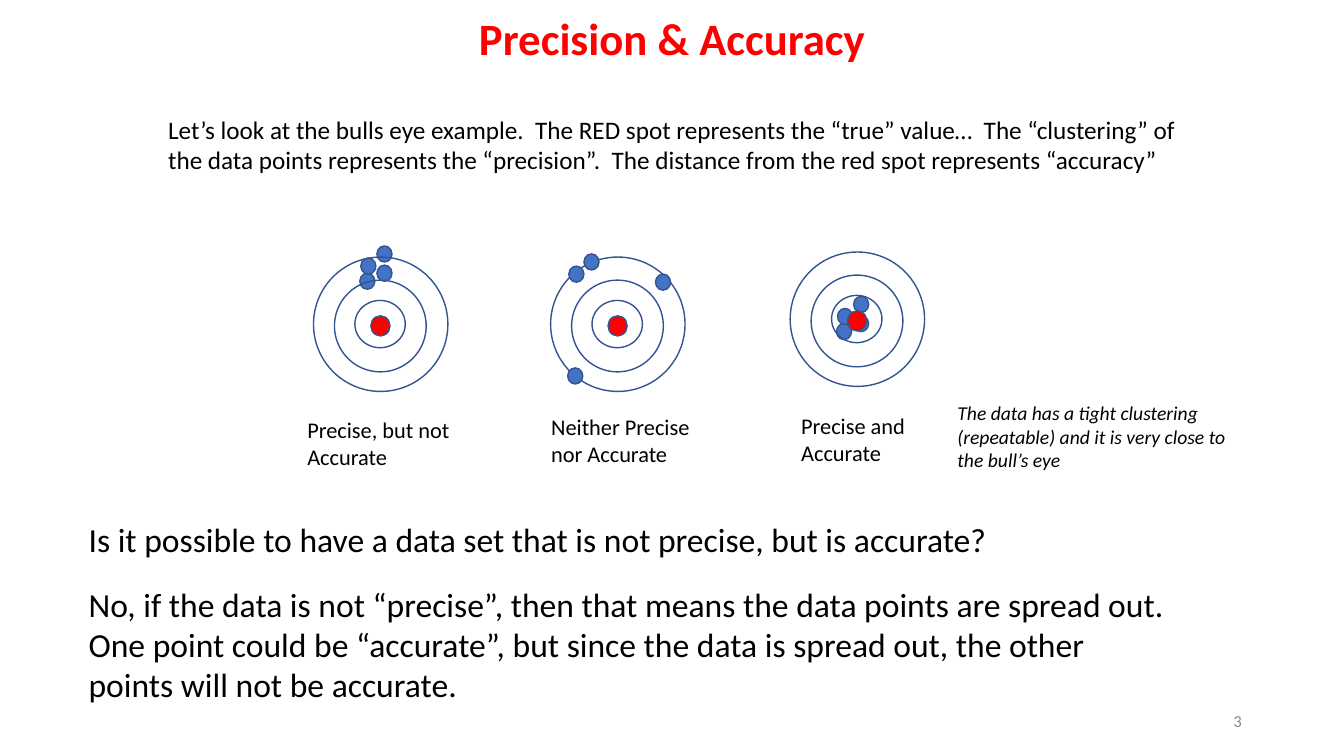
from dataclasses import dataclass, field
from typing import Any, NamedTuple

from pptx import Presentation
from pptx.dml.color import RGBColor
from pptx.enum.shapes import MSO_SHAPE
from pptx.enum.text import MSO_ANCHOR, MSO_AUTO_SIZE, PP_ALIGN
from pptx.util import Pt

OVAL = MSO_SHAPE.OVAL
LEFT, CENTER, RIGHT = PP_ALIGN.LEFT, PP_ALIGN.CENTER, PP_ALIGN.RIGHT
TOP, MIDDLE = MSO_ANCHOR.TOP, MSO_ANCHOR.MIDDLE
GROW, FIXED = MSO_AUTO_SIZE.SHAPE_TO_FIT_TEXT, MSO_AUTO_SIZE.NONE

COLORS = {
    "text": "000000",
    "title": "FF0000",
    "page_number": "898989",
    "bullseye": "FF0000",
    "hit": "4472C4",
    "outline": "325491",
}


class Area(NamedTuple):
    left: float
    top: float
    width: float
    height: float

    def in_points(self) -> list[Pt]:
        return [Pt(value) for value in self]


class Point(NamedTuple):
    x: float
    y: float


@dataclass
class Caption:
    text: str
    area: Area
    size: float
    color: str = "text"
    align: PP_ALIGN = LEFT
    anchor: MSO_ANCHOR = TOP
    fit: MSO_AUTO_SIZE = GROW
    line_spacing: float | None = None
    font: dict[str, Any] = field(default_factory=dict)


@dataclass
class Target:
    """A bull's eye; hits are offsets from its outer ring's corner."""
    corner: Point
    hits: list[Point]
    captions: list[Caption]
    hits_on_top: bool = False


# Areas relative to the corner of the outer ring
RINGS = [
    Area(0, 0, 96, 96),
    Area(29.6, 31, 36, 33.8),
    Area(15, 16.5, 65.5, 65.5),
]
BULLSEYE = Area(41, 42, 13.7, 14.4)
HIT_SIZE = (10.8, 11.5)
CLUSTER = [Point(0, 19.4), Point(0.7, 8.6), Point(12.2, 13.7), Point(12.2, 0)]


def cluster_at(x: float, y: float) -> list[Point]:
    return [Point(x + hit.x, y + hit.y) for hit in CLUSTER]


def label(text: str, left: float, top: float) -> Caption:
    return Caption(text, Area(left, top, 128.9, 46), 16)


TARGETS = [
    Target(
        Point(223.9, 183.6),
        cluster_at(33.1, -7.9),
        [label("Precise, but not Accurate", 212.4, 293.8)],
    ),
    Target(
        Point(393.3, 183.6),
        [Point(12.2, 79.2), Point(13, 6.5), Point(74.9, 12.2), Point(23.8, -2.2)],
        [label("Neither Precise nor Accurate", 386.6, 291.6)],
        hits_on_top=True,
    ),
    Target(
        Point(564.4, 180),
        cluster_at(33.1, 31.7),
        [
            label("Precise and Accurate", 565.2, 290.9),
            Caption(
                "The data has a tight clustering (repeatable) and it is very "
                "close to the bull’s eye",
                Area(676.8, 283, 220.3, 58.3), 14, font={"italic": True},
            ),
        ],
    ),
]

CAPTIONS = [
    Caption(
        "Let’s look at the bulls eye example.  The RED spot represents the "
        "“true” value…  The “clustering” of the data points represents the "
        "“precision”.  The distance from the red spot represents “accuracy”",
        Area(113, 77.8, 754.6, 51), 18,
    ),
    Caption(
        "Is it possible to have a data set that is not precise, but is accurate?",
        Area(56.2, 367.2, 754.6, 36), 24,
    ),
    Caption(
        "3", Area(678.2, 500.4, 216, 28.8), 12,
        color="page_number", align=RIGHT, anchor=MIDDLE, fit=FIXED,
    ),
    Caption(
        "Precision & Accuracy", Area(156.2, 7.2, 648, 44.6), 32,
        color="title", align=CENTER, anchor=MIDDLE, fit=FIXED,
        line_spacing=0.9, font={"bold": True},
    ),
    Caption(
        "No, if the data is not “precise”, then that means the data points are "
        "spread out.  One point could be “accurate”, but since the data is "
        "spread out, the other points will not be accurate.",
        Area(56.2, 413.3, 791.3, 94.3), 24,
    ),
]


def set_attributes(item: Any, values: dict[str, Any]) -> None:
    for name, value in values.items():
        setattr(item, name, value)


def rgb(name: str) -> RGBColor:
    return RGBColor.from_string(COLORS[name])


def add_caption(shapes: Any, caption: Caption) -> None:
    box = shapes.add_textbox(*caption.area.in_points())
    set_attributes(box.text_frame, {
        "word_wrap": True,
        "auto_size": caption.fit,
        "vertical_anchor": caption.anchor,
    })
    para = box.text_frame.paragraphs[0]
    set_attributes(para, {
        "alignment": caption.align,
        "line_spacing": caption.line_spacing,
    })
    span = para.add_run()
    span.text = caption.text
    set_attributes(span.font, {
        "name": "Calibri",
        "size": Pt(caption.size),
        **caption.font,
    })
    span.font.color.rgb = rgb(caption.color)


def add_circle(shapes: Any, corner: Point, area: Area, fill: str | None = None) -> None:
    placed = area._replace(left=corner.x + area.left, top=corner.y + area.top)
    circle = shapes.add_shape(OVAL, *placed.in_points())
    circle.shadow.inherit = False
    circle.line.color.rgb = rgb("outline")
    circle.line.width = Pt(1)
    if fill:
        circle.fill.solid()
        circle.fill.fore_color.rgb = rgb(fill)
    else:
        circle.fill.background()


def add_target(page: Any, target: Target) -> None:
    shapes = page.shapes.add_group_shape().shapes
    hits = [(Area(*hit, *HIT_SIZE), "hit") for hit in target.hits]
    face = [(ring, None) for ring in RINGS] + [(BULLSEYE, "bullseye")]
    for area, fill in face + hits if target.hits_on_top else hits + face:
        add_circle(shapes, target.corner, area, fill)
    for caption in target.captions:
        add_caption(shapes, caption)


def main() -> None:
    deck = Presentation()
    set_attributes(deck, {"slide_width": Pt(960), "slide_height": Pt(540)})
    page = deck.slides.add_slide(deck.slide_layouts[6])
    for target in TARGETS:
        add_target(page, target)
    for caption in CAPTIONS:
        add_caption(page.shapes, caption)
    deck.save("out.pptx")


if __name__ == "__main__":
    main()
